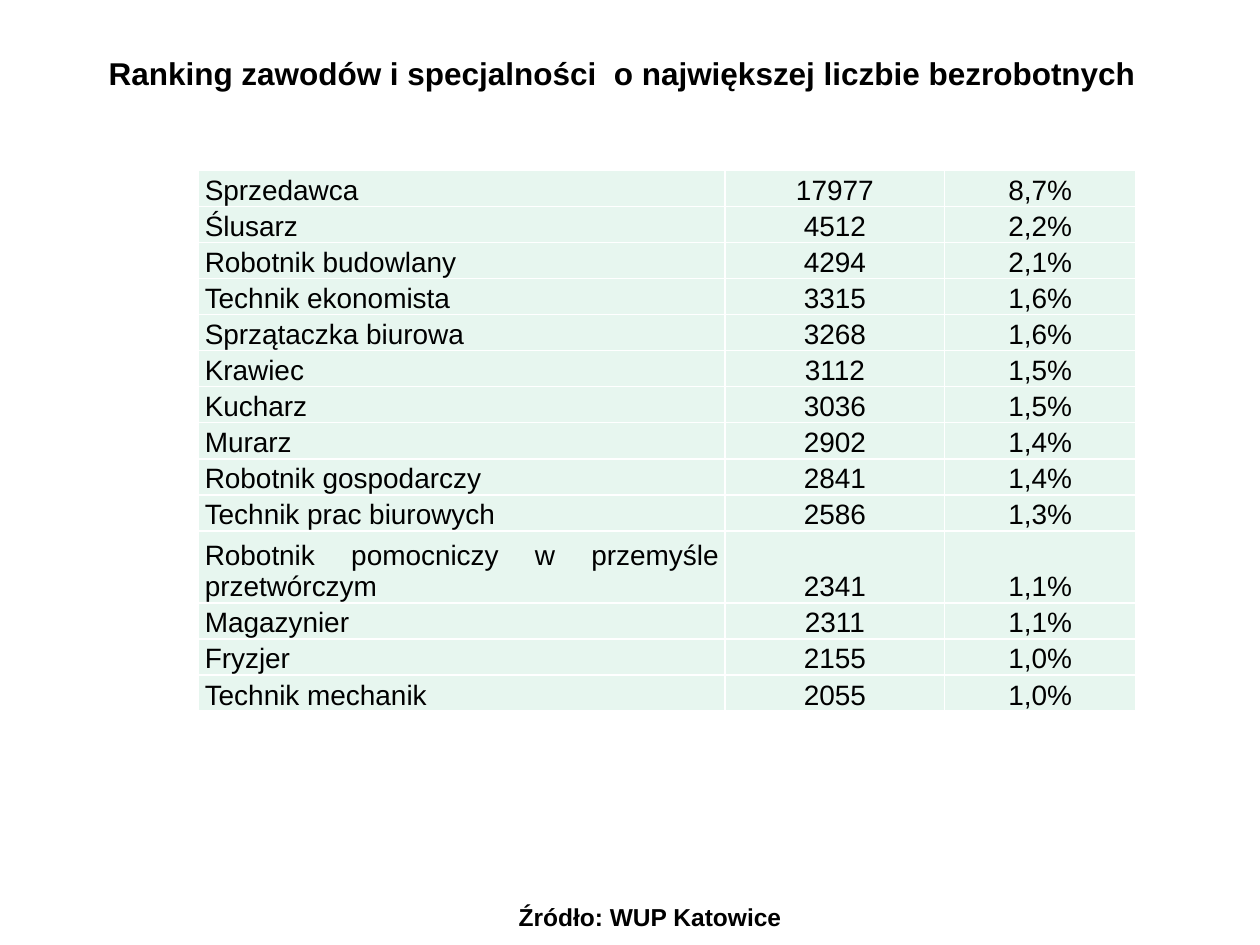
from lxml import etree
from pptx import Presentation
from pptx.dml.color import RGBColor
from pptx.enum.text import MSO_ANCHOR as Anchor, MSO_AUTO_SIZE as AutoSize, PP_ALIGN as Align
from pptx.oxml.ns import qn
from pptx.util import Pt

BLACK = RGBColor(0x00, 0x00, 0x00)
WHITE = RGBColor(0xFF, 0xFF, 0xFF)
MINT = RGBColor(0xE7, 0xF6, 0xEF)

OCCUPATIONS = [
    ("Sprzedawca", "17977", "8,7%"),
    ("Ślusarz", "4512", "2,2%"),
    ("Robotnik budowlany", "4294", "2,1%"),
    ("Technik ekonomista", "3315", "1,6%"),
    ("Sprzątaczka biurowa", "3268", "1,6%"),
    ("Krawiec", "3112", "1,5%"),
    ("Kucharz", "3036", "1,5%"),
    ("Murarz", "2902", "1,4%"),
    ("Robotnik gospodarczy", "2841", "1,4%"),
    ("Technik prac biurowych", "2586", "1,3%"),
    ("Robotnik pomocniczy w przemyśle przetwórczym", "2341", "1,1%"),
    ("Magazynier", "2311", "1,1%"),
    ("Fryzjer", "2155", "1,0%"),
    ("Technik mechanik", "2055", "1,0%"),
]
COLUMN_WIDTHS = [301, 125.3, 109.4]
ROW_HEIGHT = 20.6
TWO_LINE_ROW = 10


def write(frame, text, size, bold, align):
    frame.text = text
    para = frame.paragraphs[0]
    para.alignment = align
    font = para.runs[0].font
    for name, value in {"name": "Arial", "size": Pt(size), "bold": bold}.items():
        setattr(font, name, value)
    font.color.rgb = BLACK


def add_borders(cell):
    """Draw a thin white line on all four sides, ahead of the cell's fill."""
    properties = cell._tc.get_or_add_tcPr()
    for index, side in enumerate(("a:lnL", "a:lnR", "a:lnT", "a:lnB")):
        line = etree.Element(qn(side), w=str(Pt(1)))
        fill = etree.SubElement(line, qn("a:solidFill"))
        etree.SubElement(fill, qn("a:srgbClr"), val=str(WHITE))
        properties.insert(index, line)


deck = Presentation()
deck.slide_width, deck.slide_height = Pt(720), Pt(540)
page = deck.slides.add_slide(deck.slide_layouts[5])
page.background.fill.solid()
page.background.fill.fore_color.rgb = WHITE

# Title
title = page.shapes.title
title_format = {"left": Pt(37.4), "top": Pt(27.4), "width": Pt(636.5), "height": Pt(28.8)}
for name, value in title_format.items():
    setattr(title, name, value)
frame = title.text_frame
frame.word_wrap = True
frame.auto_size = AutoSize.NONE
frame.vertical_anchor = Anchor.TOP
write(frame, "Ranking zawodów i specjalności  o największej liczbie bezrobotnych", 18, True, Align.CENTER)

# Ranking table
table_height = ROW_HEIGHT * (len(OCCUPATIONS) + 1)
table = page.shapes.add_table(
    len(OCCUPATIONS), len(COLUMN_WIDTHS),
    Pt(113.4), Pt(97.5), Pt(sum(COLUMN_WIDTHS)), Pt(table_height),
).table
table.first_row = table.horz_banding = False
for column, width in zip(table.columns, COLUMN_WIDTHS):
    column.width = Pt(width)

cell_format = {
    "margin_left": Pt(3.6), "margin_right": Pt(3.6), "margin_top": 0, "margin_bottom": 0,
    "vertical_anchor": Anchor.BOTTOM,
}
for row, values in enumerate(OCCUPATIONS):
    table.rows[row].height = Pt(ROW_HEIGHT * (2 if row == TWO_LINE_ROW else 1))
    for column, text in enumerate(values):
        cell = table.cell(row, column)
        for name, value in cell_format.items():
            setattr(cell, name, value)
        cell.fill.solid()
        cell.fill.fore_color.rgb = MINT
        add_borders(cell)
        write(cell.text_frame, text, 16, False, Align.CENTER if column else Align.JUSTIFY)

# Source note
source = page.shapes.add_textbox(Pt(288.7), Pt(511.9), Pt(165.6), Pt(24.2))
source.text_frame.word_wrap = False
source.text_frame.auto_size = AutoSize.SHAPE_TO_FIT_TEXT
write(source.text_frame, "Źródło: WUP Katowice", 14, True, Align.CENTER)

deck.save("out.pptx")
